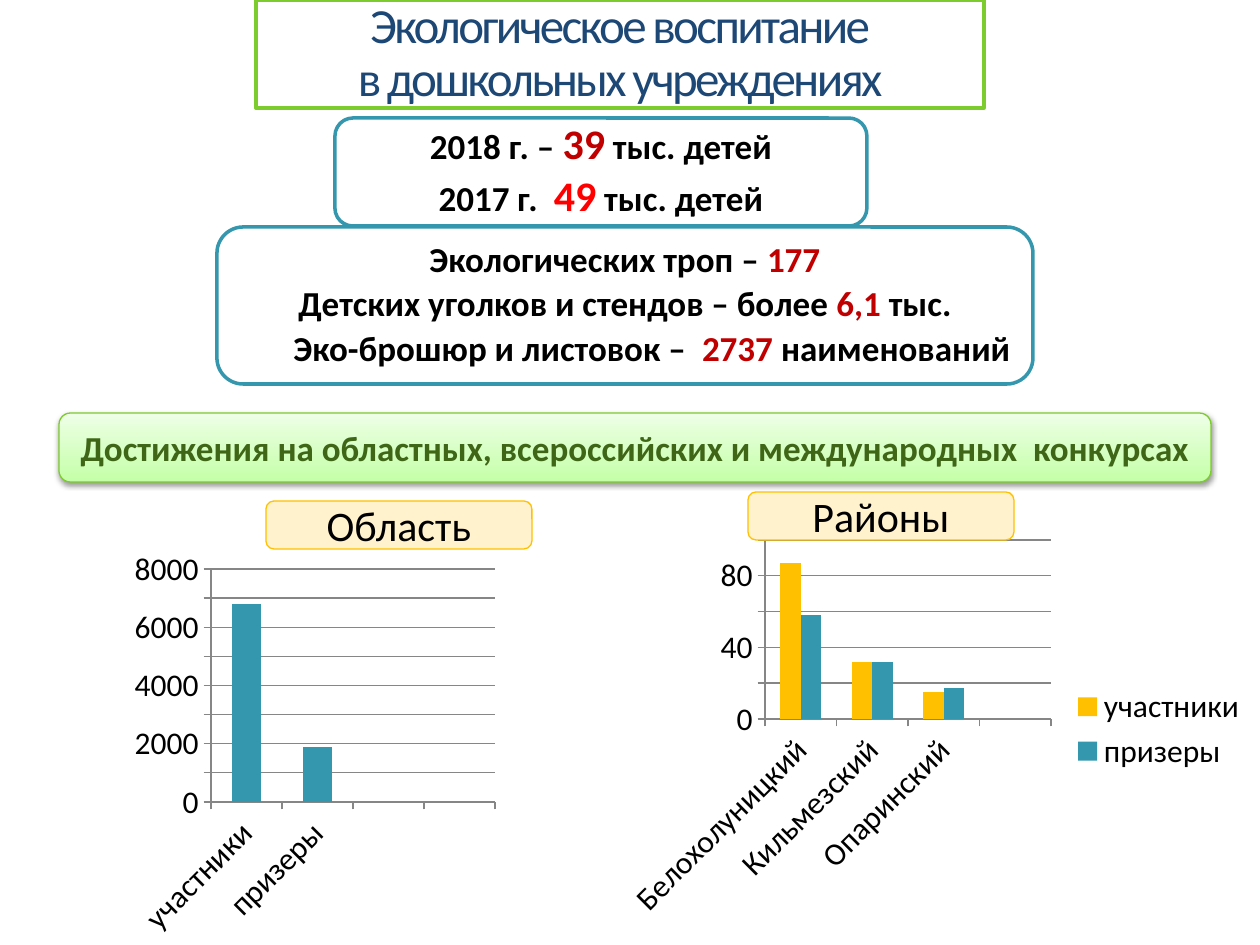
from pptx import Presentation
from pptx.chart.data import CategoryChartData
from pptx.dml.color import RGBColor
from pptx.enum.chart import XL_CHART_TYPE, XL_LEGEND_POSITION, XL_TICK_MARK
from pptx.enum.shapes import MSO_SHAPE
from pptx.enum.text import MSO_ANCHOR, PP_ALIGN
from pptx.oxml import parse_xml
from pptx.oxml.ns import nsdecls, qn
from pptx.util import Pt

PX = 914400 / 126
FONT = "Calibri"
BLACK = RGBColor(0, 0, 0)
WHITE = RGBColor(255, 255, 255)
GREY = RGBColor(0x86, 0x86, 0x86)
NAVY = RGBColor(0x1D, 0x47, 0x75)
TEAL = RGBColor(0x34, 0x97, 0xAE)
GOLD = RGBColor(0xFF, 0xC0, 0x00)
CREAM = RGBColor(0xFF, 0xF2, 0xCC)
LIME = RGBColor(0x7D, 0xCC, 0x2E)
MOSS = RGBColor(0x3F, 0x66, 0x17)
PALE = RGBColor(0xEE, 0xFF, 0xE7)
MINT = RGBColor(0xC4, 0xFF, 0xA7)
DARK = RGBColor(0xC0, 0, 0)
RED = RGBColor(255, 0, 0)


def style(item, vals):
    for name, val in vals.items():
        setattr(item, name, val)


def box(kind, rect, fill, edge, width, paras, gap=0, lead=1.0):
    """Add a shape; a paragraph lists (text, size, colour, bold); None breaks the line."""
    shape = slide.shapes.add_shape(kind, *[round(v * PX) for v in rect])
    shape.shadow.inherit = False
    shape.fill.solid()
    shape.fill.fore_color.rgb = fill
    shape.line.color.rgb = edge
    shape.line.width = Pt(width)
    frame = shape.text_frame
    style(frame, {"word_wrap": True, "vertical_anchor": MSO_ANCHOR.MIDDLE,
                  "margin_left": 0, "margin_right": 0,
                  "margin_top": 0, "margin_bottom": 0})
    for i, runs in enumerate(paras):
        para = frame.add_paragraph() if i else frame.paragraphs[0]
        style(para, {"alignment": PP_ALIGN.CENTER, "line_spacing": lead,
                     "space_before": Pt(gap if i else 0)})
        for part in runs:
            if part is None:
                para.add_line_break()
                continue
            text, size, color, bold = part
            run = para.add_run()
            run.text = text
            style(run.font, {"name": FONT, "size": Pt(size), "bold": bold})
            run.font.color.rgb = color
    return shape


deck = Presentation()
style(deck, {"slide_width": round(1260 * PX), "slide_height": round(945 * PX)})
slide = deck.slides.add_slide(deck.slide_layouts[6])
RECT, ROUND = MSO_SHAPE.RECTANGLE, MSO_SHAPE.ROUNDED_RECTANGLE

# Title
title = box(RECT, (256, 0, 728, 108), WHITE, LIME, 2,
            [[("Экологическое воспитание", 28, NAVY, False), None,
              ("в дошкольных учреждениях", 28, NAVY, False)]], lead=0.9)
for run in title.text_frame.paragraphs[0].runs:
    run.font._element.set("spc", "-150")

# Green banner with gradient and shadow
banner = box(ROUND, (59, 413, 1152, 69), MINT, LIME, 0.75,
             [[("Достижения на областных, всероссийских и международных  конкурсах",
                20, MOSS, True)]])
banner.fill.gradient()
banner.fill.gradient_angle = 90
for stop, color in zip(banner.fill.gradient_stops, (MINT, PALE)):
    stop.color.rgb = color
banner._element.spPr.find(qn("a:effectLst")).append(parse_xml(
    f'<a:outerShdw {nsdecls("a")} blurRad="39370" dist="20320" dir="5400000" '
    'rotWithShape="0"><a:srgbClr val="000000"><a:alpha val="38000"/>'
    '</a:srgbClr></a:outerShdw>'))

# Charts: frame, plot area, categories, series, scale, legend
charts = [
    ((129, 542, 374, 403), (211, 569, 284, 233),
     ["участники", "призеры", "", ""],
     [("Всего", [6800, 1900, None, None], TEAL)], 8000, 1000, False),
    ((620, 532, 640, 394), (765, 540, 286, 179),
     ["Белохолуницкий", "Кильмезский", "Опаринский", ""],
     [("участники", [87, 32, 15, None], GOLD),
      ("призеры", [58, 32, 17, None], TEAL)], 100, 20, True),
]
for rect, plot, cats, rows, top, step, legend in charts:
    data = CategoryChartData()
    data.categories = cats
    for name, vals, _ in rows:
        data.add_series(name, vals)
    chart = slide.shapes.add_chart(XL_CHART_TYPE.COLUMN_CLUSTERED,
                                   *[round(v * PX) for v in rect], data).chart
    style(chart, {"has_title": False, "has_legend": legend})
    style(chart.font, {"name": FONT, "size": Pt(18)})
    chart.font.color.rgb = BLACK
    if legend:
        style(chart.legend, {"position": XL_LEGEND_POSITION.RIGHT,
                             "include_in_layout": False})
    style(chart.plots[0], {"gap_width": 150, "overlap": 0,
                           "vary_by_categories": False})
    for series, row in zip(chart.plots[0].series, rows):
        series.format.fill.solid()
        series.format.fill.fore_color.rgb = row[2]
    style(chart.value_axis, {"minimum_scale": 0, "maximum_scale": top,
                             "major_unit": step, "has_major_gridlines": True})
    lines = [chart.value_axis.major_gridlines.format.line]
    for axis in (chart.value_axis, chart.category_axis):
        axis.major_tick_mark = XL_TICK_MARK.OUTSIDE
        lines.append(axis.format.line)
    for line in lines:
        line.color.rgb = GREY
        line.width = Pt(0.75)
    labels = chart.category_axis.tick_labels
    labels.font.size = Pt(18)
    chart.category_axis._element.find(qn("c:txPr")).find(
        qn("a:bodyPr")).set("rot", "-2700000")

    # Inner plot area as shares of the chart frame
    area = chart._chartSpace.chart.plotArea
    for old in area.findall(qn("c:layout")):
        area.remove(old)
    shares = zip("xywh", ((plot[0] - rect[0]) / rect[2],
                          (plot[1] - rect[1]) / rect[3],
                          plot[2] / rect[2], plot[3] / rect[3]))
    area.insert(0, parse_xml(
        f'<c:layout {nsdecls("c")}><c:manualLayout><c:layoutTarget val="inner"/>'
        '<c:xMode val="edge"/><c:yMode val="edge"/>'
        + "".join(f'<c:{key} val="{val:.4f}"/>' for key, val in shares)
        + '</c:manualLayout></c:layout>'))

# Chart headings
for text, left, y in (("Область", 266, 501), ("Районы", 748, 492)):
    box(ROUND, (left, y, 266, 48), CREAM, GOLD, 0.75,
        [[(text, 24, BLACK, False)]])

# Trails, corners and leaflets
facts = box(ROUND, (217, 227, 816, 157), WHITE, TEAL, 2, [
    [("Экологических троп – ", 20, BLACK, True), ("177", 20, DARK, True)],
    [("Детских уголков и стендов – более ", 20, BLACK, True),
     ("6,1", 20, DARK, True), (" тыс.", 20, BLACK, True)],
    [("Эко-брошюр и листовок –  ", 20, BLACK, True),
     ("2737 ", 20, DARK, True), ("наименований", 20, BLACK, True)],
], gap=4, lead=0.9)
facts.text_frame.paragraphs[2]._p.get_or_add_pPr().set("marL", str(round(54 * PX)))

# Children by year
box(ROUND, (335, 118, 532, 108), WHITE, TEAL, 2, [
    [(year, 20, BLACK, True), (count, 24, color, True),
     (" тыс. детей", 20, BLACK, True)]
    for year, count, color in (("2018 г. – ", "39", DARK),
                               ("2017 г.  ", "49", RED))
], gap=4, lead=0.9)

deck.save("out.pptx")
